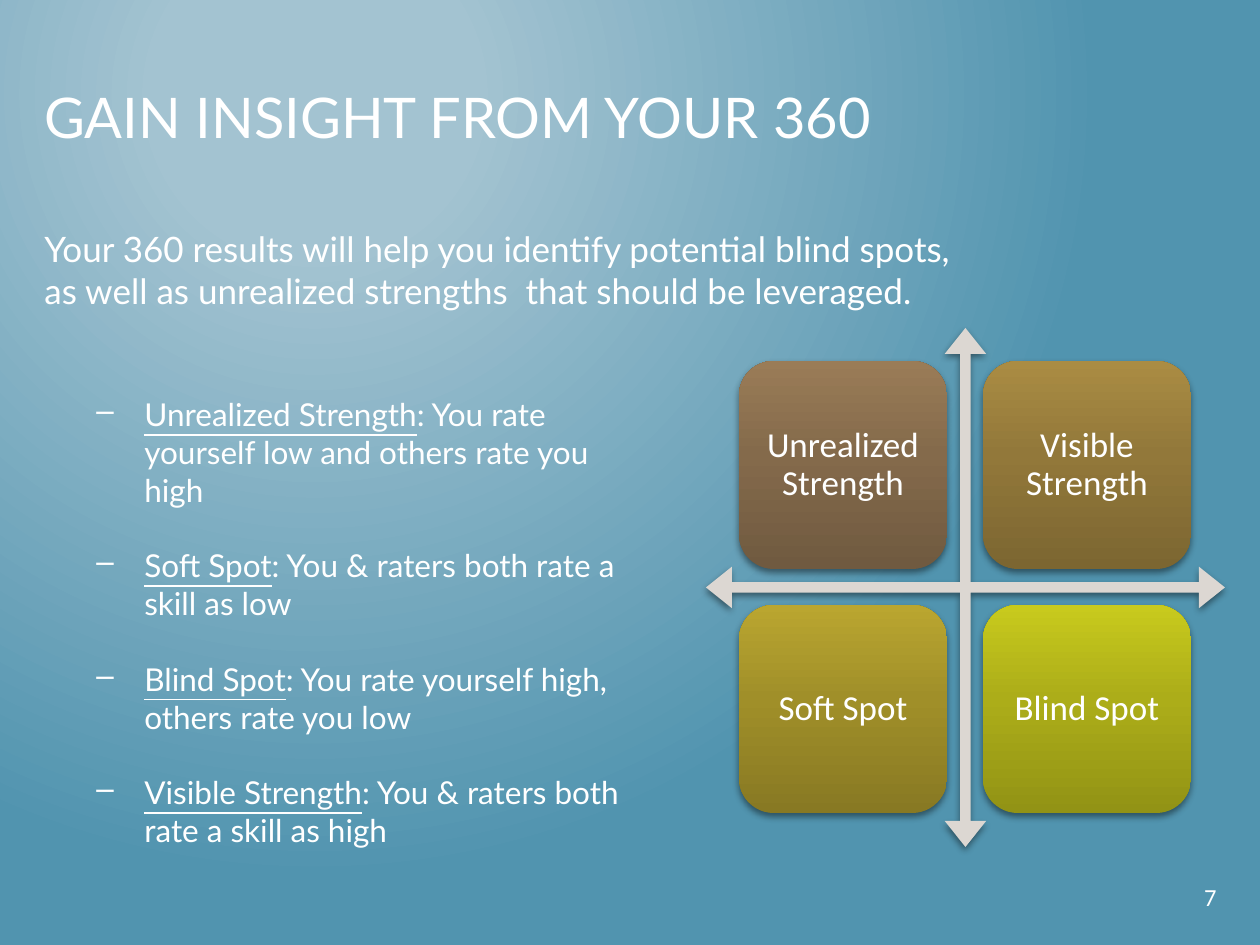
from lxml import etree
from pptx import Presentation
from pptx import util as u
from pptx.dml.color import RGBColor
from pptx.enum import shapes, text
from pptx.oxml import parse_xml
from pptx.oxml.ns import nsdecls, qn

PX = 914400 / 126
WHITE = "FFFFFF"
CARDS = [
    ("Unrealized Strength", ["705A40", "846A4B", "9A7C57"]),
    ("Visible Strength", ["7C6631", "92783A", "AA8C43"]),
    ("Soft Spot", ["887923", "A08F29", "BAA630"]),
    ("Blind Spot", ["929315", "ACAD19", "C8CA1D"]),
]
DEFINITIONS = [
    ("Unrealized Strength", ": You rate yourself low and others rate you high"),
    ("Soft Spot", ": You & raters both rate a skill as low"),
    ("Blind Spot", ": You rate yourself high, others rate you low"),
    ("Visible Strength", ": You & raters both rate a skill as high"),
]


def px(*lengths):
    """Turn px lengths into a list of EMU."""
    return [u.Emu(round(length * PX)) for length in lengths]


def color(value):
    """Turn a hex string into a colour."""
    return RGBColor.from_string(value)


def add_run(paragraph, words, size, font, underline=None):
    """Add one white run to a paragraph."""
    run = paragraph.add_run()
    run.text = words
    run.font.size = u.Pt(size)
    run.font.name = font
    run.font.underline = underline
    run.font.color.rgb = color(WHITE)


def add_text_box(slide, box):
    """Add a wrapping text box and return its text frame."""
    frame = slide.shapes.add_textbox(*px(*box)).text_frame
    frame.word_wrap = True
    return frame


def add_line(slide, box, words, size, font, align=text.PP_ALIGN.LEFT):
    """Add a text box that holds one run."""
    paragraph = add_text_box(slide, box).paragraphs[0]
    paragraph.alignment = align
    add_run(paragraph, words, size, font)


def set_gradient(fill, element, stops, direction):
    """Give an element a gradient of (percent, hex) stops."""
    fill.solid()
    solid = element.find(".//" + qn("a:solidFill"))
    stop_xml = "".join(
        f'<a:gs pos="{position * 1000}"><a:srgbClr val="{value}"/></a:gs>'
        for position, value in stops
    )
    gradient = parse_xml(
        f'<a:gradFill {nsdecls("a")} rotWithShape="1">'
        f"<a:gsLst>{stop_xml}</a:gsLst>{direction}</a:gradFill>"
    )
    solid.getparent().replace(solid, gradient)


def add_shadowed_shape(slide, kind, box):
    """Add a preset shape without a line and with a soft shadow below."""
    shape = slide.shapes.add_shape(kind, *px(*box))
    shape.line.fill.background()
    shape.shadow.inherit = False
    effects = shape.element.spPr.find(qn("a:effectLst"))
    shadow = etree.SubElement(
        effects, qn("a:outerShdw"), blurRad="50800", dist="25400",
        dir="5400000", rotWithShape="0",
    )
    black = etree.SubElement(shadow, qn("a:srgbClr"), val="000000")
    etree.SubElement(black, qn("a:alpha"), val="44000")
    return shape


def add_axes(slide):
    """Add the four-headed arrow behind the cards."""
    arrow = add_shadowed_shape(slide, shapes.MSO_SHAPE.QUAD_ARROW, (706, 328, 519, 519))
    for index, value in enumerate((0.02, 0.04, 0.05)):
        arrow.adjustments[index] = value
    arrow.fill.solid()
    arrow.fill.fore_color.rgb = color("DCD7D2")


def add_card(slide, index, label, colors):
    """Add one labelled card of the two by two matrix."""
    row, column = divmod(index, 2)
    box = (739 + 244 * column, 361 + 244 * row, 208, 208)
    card = add_shadowed_shape(slide, shapes.MSO_SHAPE.ROUNDED_RECTANGLE, box)
    set_gradient(card.fill, card.element, zip((0, 55, 100), colors),
                 '<a:lin ang="16200000" scaled="0"/>')
    frame = card.text_frame
    frame.word_wrap = True
    frame.vertical_anchor = text.MSO_ANCHOR.MIDDLE
    (frame.margin_left, frame.margin_right,
     frame.margin_top, frame.margin_bottom) = px(10, 10, 10, 10)
    paragraph = frame.paragraphs[0]
    paragraph.alignment = text.PP_ALIGN.CENTER
    paragraph.line_spacing = 0.9
    add_run(paragraph, label, 20, "Calibri")


def add_definitions(slide, box):
    """Add the dashed list of underlined terms and their meanings."""
    frame = add_text_box(slide, box)
    indent = px(48)[0]
    for index, (term, meaning) in enumerate(DEFINITIONS):
        paragraph = frame.add_paragraph() if index else frame.paragraphs[0]
        if index:
            paragraph.space_before = u.Pt(21.6)
        properties = paragraph._p.get_or_add_pPr()
        properties.set("marL", str(indent))
        properties.set("indent", str(-indent))
        etree.SubElement(properties, qn("a:buChar"), char="–")
        add_run(paragraph, term, 18, "Lato", True)
        add_run(paragraph, meaning, 18, "Lato")


def main():
    """Build the slide and save it."""
    presentation = Presentation()
    presentation.slide_width, presentation.slide_height = px(1260, 945)
    slide = presentation.slides.add_slide(presentation.slide_layouts[6])
    set_gradient(
        slide.background.fill, slide.element, [(20, "A3C3D1"), (100, "5194AF")],
        '<a:path path="circle">'
        '<a:fillToRect l="50000" t="20000" r="100000" b="100000"/></a:path>',
    )
    add_line(slide, (32, 76, 1071, 73), "GAIN INSIGHT FROM YOUR 360", 32, "Lato")
    add_line(slide, (977, 876, 252, 50), "7", 14, "Calibri", text.PP_ALIGN.RIGHT)
    add_axes(slide)
    for index, (label, colors) in enumerate(CARDS):
        add_card(slide, index, label, colors)
    add_definitions(slide, (84, 389, 567, 471))
    add_line(
        slide, (32, 221, 950, 97),
        "Your 360 results will help you identify potential blind spots, "
        "as well as unrealized strengths  that should be leveraged.",
        20, "Lato",
    )
    presentation.save("out.pptx")


if __name__ == "__main__":
    main()
